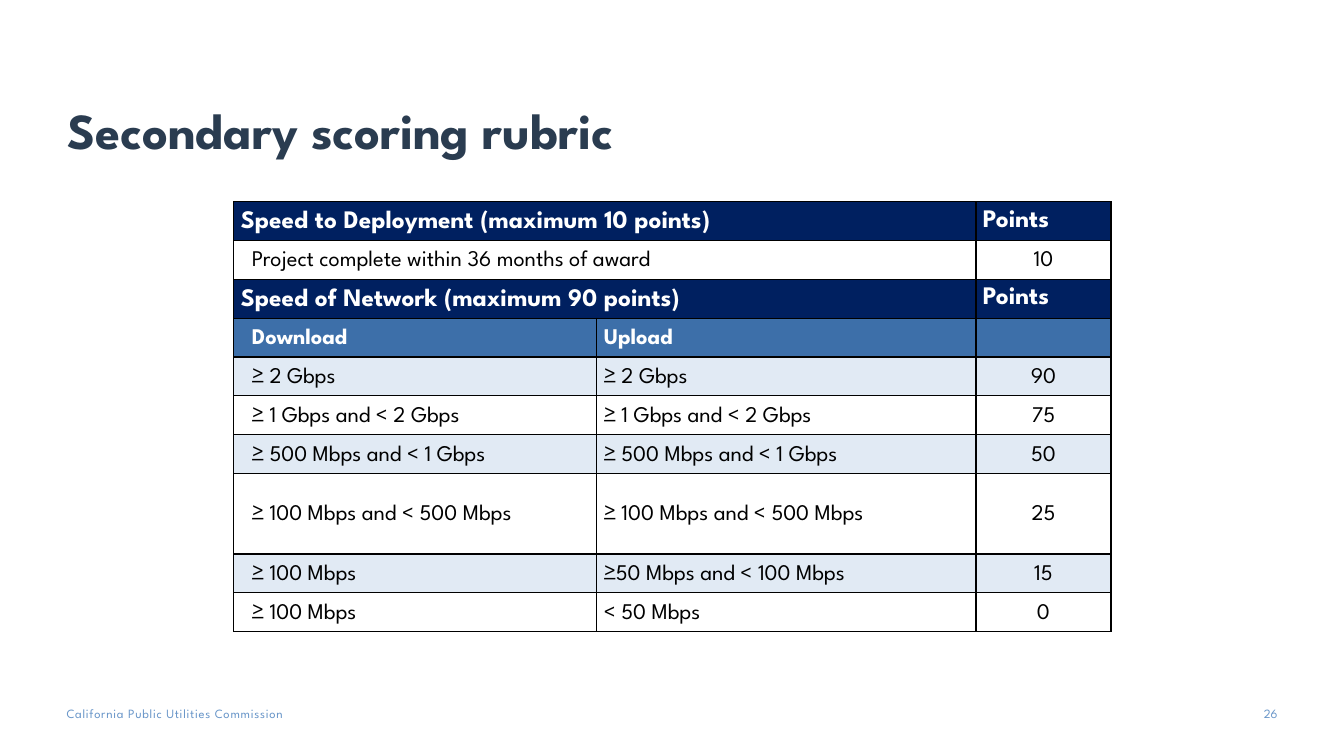
from pptx import Presentation
from pptx.dml.color import RGBColor as Rgb
from pptx.enum.text import MSO_ANCHOR as Anchor, PP_ALIGN as Align
from pptx.oxml import parse_xml
from pptx.oxml.ns import nsdecls
from pptx.util import Inches, Pt

FONT = "League Spartan"
COLORS = {
    "title": "2A3C50", "footer": "6996C9", "header": "002060", "subheader": "3D6FA9",
    "band": "E1EAF4", "white": "FFFFFF", "black": "000000",
}
SLIDE_WIDTH, SLIDE_HEIGHT = Inches(13.33), Inches(7.5)
COLUMN, ROW = SLIDE_WIDTH / 100, SLIDE_HEIGHT / 100

# Boxes: left, top, width, height in hundredths of the slide
TITLE_BOX = (5.03, 5.33, 90, 16.4)
TABLE_BOX = (17.4, 26.67, 65.27, 56.93)
FOOTER_BOX = (4.95, 93.33, 24.08, 2)
NUMBER_BOX = (91.9, 93.33, 3.15, 2.67)

# Shares of the table's width and height
COLUMN_SHARES = (3.6, 3.76, 1.34)
ROW_SHARES = (1,) * 7 + (2.07,) + (1,) * 2

HEADER = {"size": 18, "bold": True, "color": "white"}
SUBHEADER = {"size": 16, "bold": True, "color": "white"}
BODY = {"size": 16, "bold": False, "color": "black"}
SPACED = {"line_spacing": 1.16, "space_before": Pt(3), "space_after": Pt(3)}
CELL_FRAME = {
    "vertical_anchor": Anchor.MIDDLE, "margin_left": Inches(0.07),
    "margin_right": Inches(0.07), "margin_top": 0, "margin_bottom": 0,
}

# Row kind, then the texts; None is covered by the merged cell to its left
RUBRIC = [
    ("header", "Speed to Deployment (maximum 10 points)", None, "Points"),
    ("white", "Project complete within 36 months of award", None, "10"),
    ("header", "Speed of Network (maximum 90 points)", None, "Points"),
    ("subheader", "Download", "Upload", ""),
    ("band", "≥ 2 Gbps", "≥ 2 Gbps", "90"),
    ("white", "≥ 1 Gbps and < 2 Gbps", "≥ 1 Gbps and < 2 Gbps", "75"),
    ("band", "≥ 500 Mbps and < 1 Gbps", "≥ 500 Mbps and < 1 Gbps", "50"),
    ("white", "≥ 100 Mbps and < 500 Mbps", "≥ 100 Mbps and < 500 Mbps", "25"),
    ("band", "≥ 100 Mbps", "≥50 Mbps and < 100 Mbps", "15"),
    ("white", "≥ 100 Mbps", "< 50 Mbps", "0"),
]


def place(box):
    left, top, width, height = box
    return round(left * COLUMN), round(top * ROW), round(width * COLUMN), round(height * ROW)


def set_all(target, values):
    for name, value in values.items():
        setattr(target, name, value)


def write(para, text, size, color, bold=False):
    span = para.add_run()
    span.text = text
    set_all(span.font, {"name": FONT, "size": Pt(size), "bold": bold})
    span.font.color.rgb = Rgb.from_string(COLORS[color])
    return span


def add_text(page, box, text, style, frame_format=None, align=Align.LEFT):
    frame = page.shapes.add_textbox(*place(box)).text_frame
    margins = dict.fromkeys(("margin_left", "margin_top", "margin_right", "margin_bottom"), 0)
    set_all(frame, {"word_wrap": True, **margins, **(frame_format or {})})
    para = frame.paragraphs[0]
    para.alignment = align
    return write(para, text, **style)


def add_title(page, box):
    add_text(page, box, "Secondary scoring rubric",
             {"size": 36, "color": "title", "bold": True},
             {"vertical_anchor": Anchor.BOTTOM, "margin_top": Inches(0.05),
              "margin_right": Inches(0.1), "margin_bottom": Inches(0.05)})


def add_footer(page, name_box, number_box):
    style = {"size": 9, "color": "footer"}
    name = add_text(page, name_box, "California Public Utilities Commission", style)
    name.font._element.set("spc", "50")
    add_text(page, number_box, "26", style, align=Align.RIGHT)


def add_borders(cell):
    properties = cell._tc.get_or_add_tcPr()
    for side in ("lnL", "lnR", "lnT", "lnB"):
        properties.append(parse_xml(
            f'<a:{side} {nsdecls("a")} w="{Pt(1)}"><a:solidFill>'
            f'<a:srgbClr val="{COLORS["black"]}"/></a:solidFill></a:{side}>'))


def fill_cell(cell, kind, column, text):
    add_borders(cell)
    cell.fill.solid()
    cell.fill.fore_color.rgb = Rgb.from_string(COLORS[kind])
    set_all(cell, CELL_FRAME)
    if not text:
        return
    para = cell.text_frame.paragraphs[0]
    is_points = column == len(COLUMN_SHARES) - 1
    if not (is_points and kind == "header"):
        set_all(para, SPACED)
    if is_points and kind != "header":
        para.alignment = Align.CENTER
    if column == 0 and kind != "header":
        para._p.get_or_add_pPr().set("marL", str(Inches(0.11)))
    write(para, text, **{"header": HEADER, "subheader": SUBHEADER}.get(kind, BODY))


def add_rubric(page, box):
    left, top, width, height = place(box)
    table = page.shapes.add_table(
        len(RUBRIC), len(COLUMN_SHARES), left, top, width, height).table
    for column, share in zip(table.columns, COLUMN_SHARES):
        column.width = round(width * share / sum(COLUMN_SHARES))
    for row, share in zip(table.rows, ROW_SHARES):
        row.height = round(height * share / sum(ROW_SHARES))
    for row, (kind, *texts) in enumerate(RUBRIC):
        for column, text in enumerate(texts):
            fill_cell(table.cell(row, column), kind, column, text)
        if texts[1] is None:
            table.cell(row, 0).merge(table.cell(row, 1))


def main():
    deck = Presentation()
    set_all(deck, {"slide_width": SLIDE_WIDTH, "slide_height": SLIDE_HEIGHT})
    page = deck.slides.add_slide(deck.slide_layouts[6])
    add_footer(page, FOOTER_BOX, NUMBER_BOX)
    add_title(page, TITLE_BOX)
    add_rubric(page, TABLE_BOX)
    deck.save("out.pptx")


if __name__ == "__main__":
    main()
